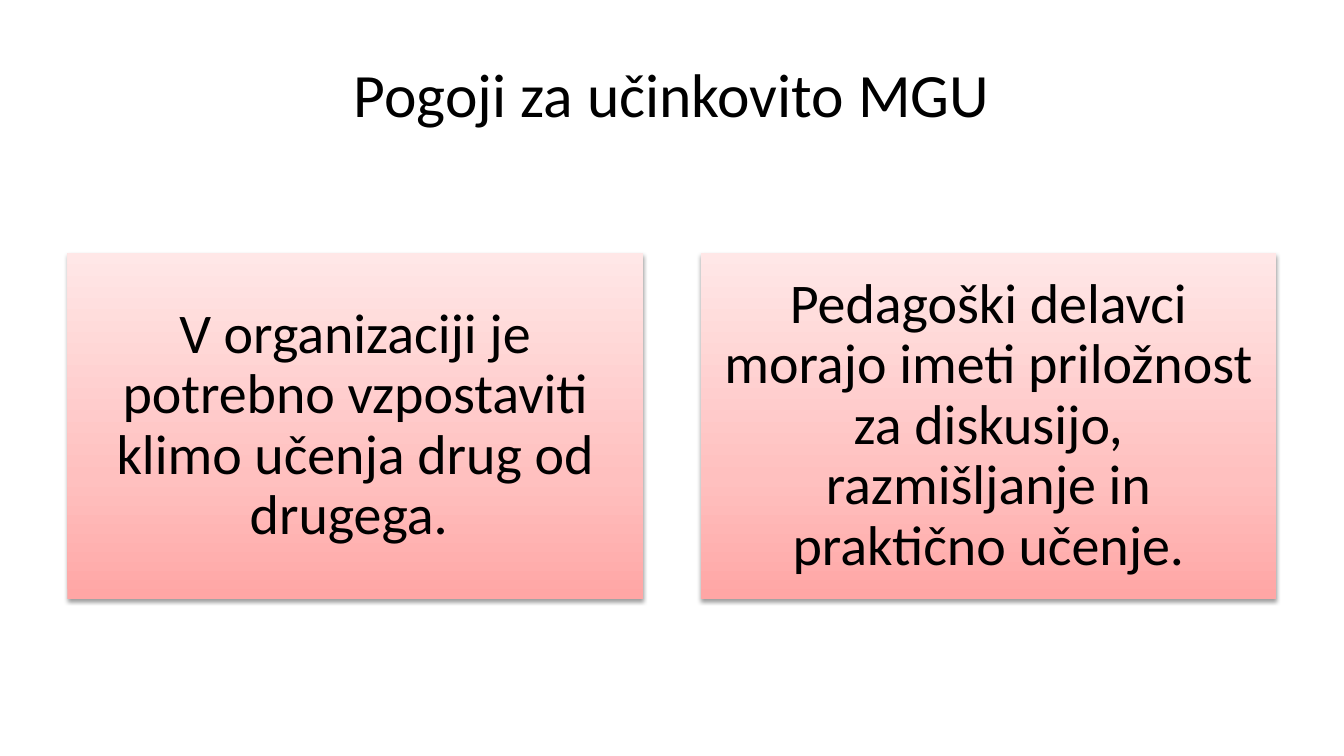
from copy import deepcopy

from lxml import etree
from pptx import Presentation
from pptx import util as u
from pptx.dml.color import RGBColor
from pptx.enum import shapes, text
from pptx.oxml import ns

HUES = {"ink": "000000", "deep": "FFA6A5", "mid": "FFC0BF", "pale": "FFE7E7"}


class Deck:
    font = "Calibri"
    stops = ((0, "deep"), (0.35, "mid"), (1, "pale"))

    def __init__(self, wide, high):
        self.show = Presentation()
        self.show.slide_width = u.Cm(wide)
        self.show.slide_height = u.Cm(high)
        self.slide = self.show.slides.add_slide(self.show.slide_layouts[6])

    def label(self, shape, words, size, inset, pitch):
        frame = shape.text_frame
        frame.word_wrap = True
        frame.vertical_anchor = text.MSO_ANCHOR.MIDDLE
        frame.margin_left = frame.margin_right = u.Cm(inset)
        frame.margin_top = frame.margin_bottom = u.Cm(inset)
        para = frame.paragraphs[0]
        para.alignment = text.PP_ALIGN.CENTER
        para.line_spacing = pitch
        run = para.add_run()
        run.text = words
        run.font.name = self.font
        run.font.size = u.Pt(size)
        run.font.color.rgb = RGBColor.from_string(HUES["ink"])

    def title(self, words, *place):
        box = self.slide.shapes.add_textbox(*map(u.Cm, place))
        self.label(box, words, 44, 0.25, 1.0)

    def card(self, words, *place):
        card = self.slide.shapes.add_shape(
            shapes.MSO_SHAPE.RECTANGLE, *map(u.Cm, place))
        card.line.fill.background()
        self.shade(card)
        self.shadow(card)
        self.label(card, words, 40, 0.43, 0.9)

    def shade(self, shape):
        shape.fill.gradient()
        shape.fill.gradient_angle = 90
        group = shape._element.spPr.find(ns.qn("a:gradFill")).find(ns.qn("a:gsLst"))
        group.append(deepcopy(group[-1]))
        for stop, (spot, hue) in zip(shape.fill.gradient_stops, self.stops):
            stop.position = spot
            stop.color.rgb = RGBColor.from_string(HUES[hue])

    def shadow(self, shape):
        shape.shadow.inherit = False
        effects = shape._element.spPr.find(ns.qn("a:effectLst"))
        outer = etree.SubElement(
            effects, ns.qn("a:outerShdw"), blurRad=str(u.Pt(3.1)),
            dist=str(u.Pt(1.6)), dir="5400000", rotWithShape="0")
        color = etree.SubElement(outer, ns.qn("a:srgbClr"), val=HUES["ink"])
        etree.SubElement(color, ns.qn("a:alpha"), val="38000")


def main():
    deck = Deck(33.87, 19.05)
    left, wide, gap = 1.7, 14.5, 1.46
    deck.title("Pogoji za učinkovito MGU", left, 0.76, 2 * wide + gap, 3.18)
    needs = (
        "V organizaciji je potrebno vzpostaviti klimo učenja drug od drugega. ",
        "Pedagoški delavci morajo imeti priložnost za diskusijo, "
        "razmišljanje in praktično učenje.",
    )
    for col, words in enumerate(needs):
        deck.card(words, left + col * (wide + gap), 6.38, wide, 8.71)
    deck.show.save("out.pptx")


if __name__ == "__main__":
    main()
